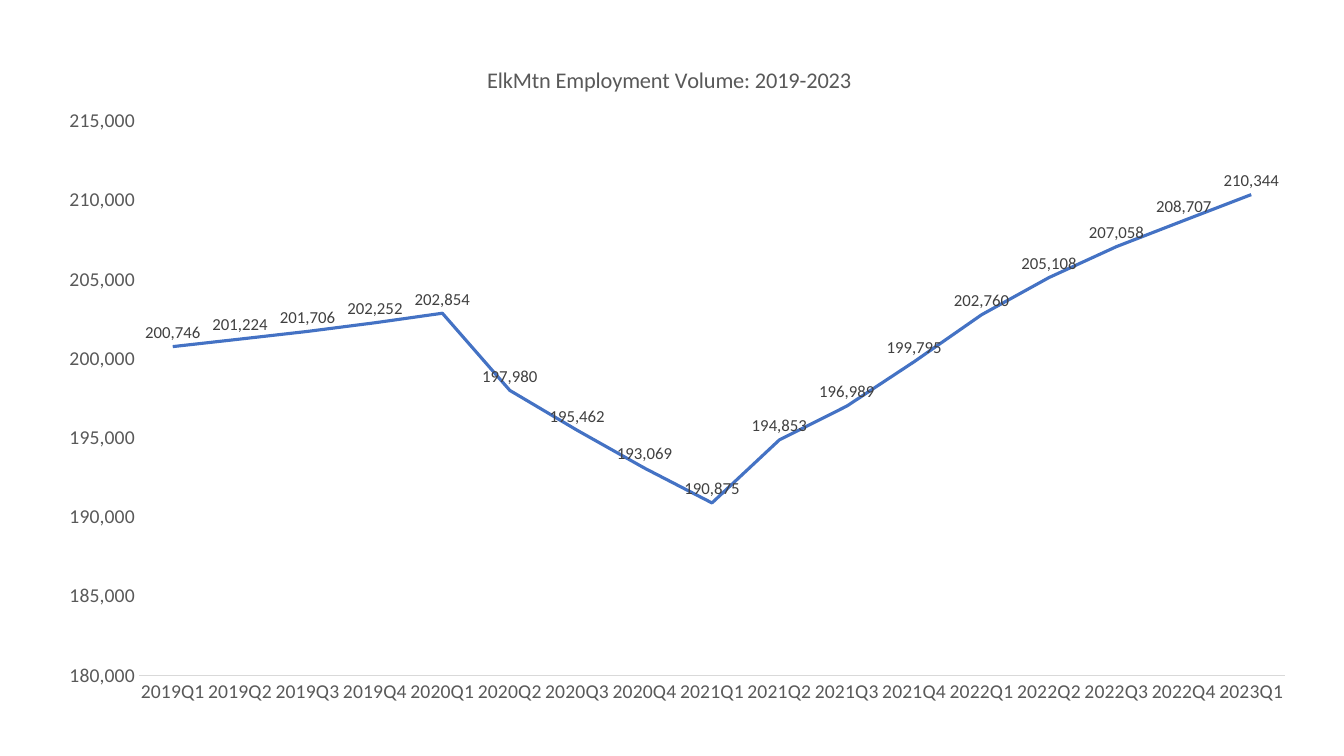
from lxml import etree
from pptx import Presentation
from pptx import util as u
from pptx.chart import data as chart_data
from pptx.dml import color
from pptx.enum import chart as ch
from pptx.oxml import ns

COLORS = {"text": "595959", "label": "404040", "line": "4472C4", "axis": "D9D9D9",
          "base": "000000", "back": "FFFFFF"}
NUMBER_FORMAT = "#,###"
QUARTERS = [f"{year}Q{quarter}" for year in range(2019, 2024) for quarter in range(1, 5)][:17]
EMPLOYMENT = [200746, 201224, 201706, 202252, 202854, 197980, 195462, 193069, 190875,
              194853, 196989, 199795, 202760, 205108, 207058, 208707, 210344]


class SlideBuilder:
    """Hold the chart style and the current slide."""

    def __init__(self, deck, font_name="Calibri"):
        self.font_name = font_name
        self.slide = deck.slides.add_slide(deck.slide_layouts[6])
        fill = self.slide.background.fill
        fill.solid()
        fill.fore_color.rgb = self.rgb("back")

    def rgb(self, name):
        return color.RGBColor.from_string(COLORS[name])

    def style_font(self, font, size, color_name):
        font.name = self.font_name
        font.size = u.Pt(size)
        font.bold = False
        font.color.rgb = self.rgb(color_name)

    def place(self, element, **position):
        for old in element.findall(ns.qn("c:layout")):
            element.remove(old)
        layout = etree.Element(ns.qn("c:layout"))
        manual = etree.SubElement(layout, ns.qn("c:manualLayout"))
        for tag, value in position.items():
            etree.SubElement(manual, ns.qn(f"c:{tag}")).set("val", str(value))
        text = element.find(ns.qn("c:tx"))
        element.insert(0 if text is None else 1, layout)

    def line_chart(self, left, top, width, height):
        data = chart_data.CategoryChartData(number_format=NUMBER_FORMAT)
        data.categories = QUARTERS
        data.add_series("Series 1", EMPLOYMENT)
        frame = self.slide.shapes.add_chart(
            ch.XL_CHART_TYPE.LINE, u.Pt(left), u.Pt(top), u.Pt(width), u.Pt(height), data)
        chart = frame.chart
        chart.has_legend = False
        self.style_font(chart.font, 14, "base")
        plot = chart.plots[0]
        plot.vary_by_categories = False
        self.place(chart.element.chart.plotArea, layoutTarget="inner", xMode="edge",
                   yMode="edge", x=0.0755, y=0.128, w=0.9045, h=0.81)
        return chart

    def title(self, chart, words):
        chart.has_title = True
        para = chart.chart_title.text_frame.paragraphs[0]
        span = para.add_run()
        span.text = words
        self.style_font(span.font, 16, "text")
        chart.chart_title.include_in_layout = False
        self.place(chart.element.chart.find(ns.qn("c:title")),
                   xMode="edge", yMode="edge", x=0.347, y=0.04)

    def axis(self, axis):
        axis.has_major_gridlines = False
        axis.major_tick_mark = axis.minor_tick_mark = ch.XL_TICK_MARK.NONE
        self.style_font(axis.tick_labels.font, 14, "text")

    def category_axis(self, axis):
        self.axis(axis)
        axis.format.line.color.rgb = self.rgb("axis")
        axis.format.line.width = u.Pt(0.75)

    def value_axis(self, axis, low, high, step):
        self.axis(axis)
        axis.minimum_scale, axis.maximum_scale, axis.major_unit = low, high, step
        axis.tick_labels.number_format = NUMBER_FORMAT
        axis.tick_labels.number_format_is_linked = False
        axis.format.line.fill.background()

    def series(self, series):
        series.smooth = False
        series.marker.style = ch.XL_MARKER_STYLE.NONE
        series.format.line.color.rgb = self.rgb("line")
        series.format.line.width = u.Pt(2.25)
        labels = series.data_labels
        labels.show_value = True
        labels.position = ch.XL_LABEL_POSITION.ABOVE
        labels.number_format = NUMBER_FORMAT
        labels.number_format_is_linked = False
        self.style_font(labels.font, 12, "label")


def main():
    deck = Presentation()
    deck.slide_width, deck.slide_height = u.Pt(960), u.Pt(540)
    page = SlideBuilder(deck)
    chart = page.line_chart(31, 23.8, 905, 488.9)
    page.title(chart, "ElkMtn Employment Volume: 2019-2023")
    page.category_axis(chart.category_axis)
    page.value_axis(chart.value_axis, 180000, 215000, 5000)
    page.series(chart.plots[0].series[0])
    deck.save("out.pptx")


if __name__ == "__main__":
    main()
